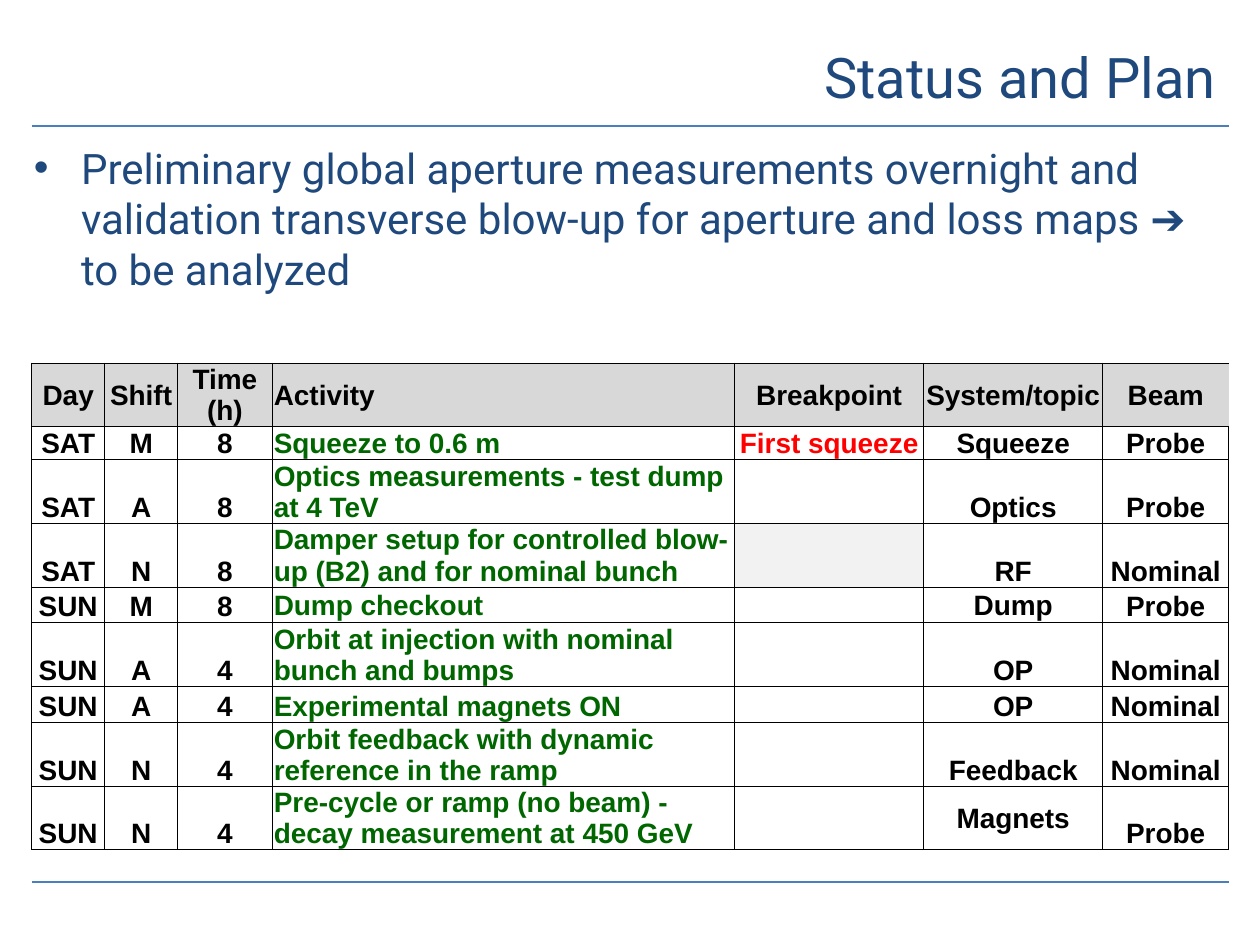
from lxml import etree
from pptx import Presentation, util as u
from pptx.dml.color import RGBColor
from pptx.enum import shapes, text
from pptx.oxml import ns

NAVY = RGBColor(0x1F, 0x49, 0x7D)
BLUE = RGBColor(0x4B, 0x7E, 0xBC)
BLACK = RGBColor(0, 0, 0)
WHITE = RGBColor(255, 255, 255)
GREEN = RGBColor(0, 0x66, 0)
RED = RGBColor(255, 0, 0)
GRAY = RGBColor(0xD8, 0xD8, 0xD8)
PALE = RGBColor(0xF2, 0xF2, 0xF2)

MID, LOW = text.MSO_ANCHOR.MIDDLE, text.MSO_ANCHOR.BOTTOM
LEFT, MIDST = text.PP_ALIGN.LEFT, text.PP_ALIGN.CENTER

WIDTHS = [1.47, 1.47, 1.91, 9.32, 3.81, 3.61, 2.54]
HEIGHTS = [0.53] + [0.61] * 7 + [0.56]
HEAD = ["Day", "Shift", "Time (h)", "Activity", "Breakpoint", "System/topic", "Beam"]
PLAN = [
    ["SAT", "M", "8", "Squeeze to 0.6 m", "First squeeze", "Squeeze", "Probe"],
    ["SAT", "A", "8", "Optics measurements - test dump at 4 TeV", "", "Optics", "Probe"],
    ["SAT", "N", "8", "Damper setup for controlled blow-up (B2) and for nominal bunch",
     "", "RF", "Nominal"],
    ["SUN", "M", "8", "Dump checkout", "", "Dump", "Probe"],
    ["SUN", "A", "4", "Orbit at injection with nominal bunch and bumps", "", "OP", "Nominal"],
    ["SUN", "A", "4", "Experimental magnets ON", "", "OP", "Nominal"],
    ["SUN", "N", "4", "Orbit feedback with dynamic reference in the ramp",
     "", "Feedback", "Nominal"],
    ["SUN", "N", "4", "Pre-cycle or ramp (no beam) - decay measurement at 450 GeV",
     "", "Magnets", "Probe"],
]
ACT, BREAK, TOPIC, BEAM = 3, 4, 5, 6
MIDDLE = {(row, ACT) for row in (1, 2, 3, 4, 5, 8)} | {(4, TOPIC), (8, TOPIC)}
INK = {ACT: GREEN, BREAK: RED}


class Deck:
    sans = "Roboto"
    grid = "Arial"

    def __init__(self, slide):
        self.slide = slide

    def run(self, para, words, face, size, color, bold=False):
        run = para.add_run()
        run.text = words
        font = run.font
        font.name, font.size, font.bold = face, u.Pt(size), bold
        font.color.rgb = color

    def place(self, shape, left, top, width, height):
        shape.left, shape.top = u.Cm(left), u.Cm(top)
        shape.width, shape.height = u.Cm(width), u.Cm(height)

    def rule(self, top):
        line = self.slide.shapes.add_connector(
            shapes.MSO_CONNECTOR.STRAIGHT, u.Cm(0.64), u.Cm(top), u.Cm(24.77), u.Cm(top))
        line.line.color.rgb = BLUE
        line.line.width = u.Pt(1.5)
        etree.SubElement(line._element.spPr, ns.qn("a:effectLst"))

    def title(self, words):
        shape = self.slide.shapes.title
        self.place(shape, 4.45, 0.43, 20.32, 2.21)
        frame = shape.text_frame
        frame.vertical_anchor = MID
        frame.auto_size = text.MSO_AUTO_SIZE.NONE
        para = frame.paragraphs[0]
        para.alignment = text.PP_ALIGN.RIGHT
        self.run(para, words, self.sans, 32, NAVY)

    def body(self, words):
        shape = self.slide.placeholders[1]
        self.place(shape, 0.43, 2.74, 24.13, 2.54)
        frame = shape.text_frame
        frame.auto_size = text.MSO_AUTO_SIZE.NONE
        para = frame.paragraphs[0]
        prop = para._p.get_or_add_pPr()
        prop.set("marL", str(u.Cm(0.95)))
        prop.set("indent", str(u.Cm(-0.95)))
        etree.SubElement(prop, ns.qn("a:buFont"), typeface="Arial")
        etree.SubElement(prop, ns.qn("a:buChar"), char="•")
        para.space_before = u.Pt(0)
        self.run(para, words, self.sans, 24, NAVY)

    def edge(self, cell, sides):
        prop = cell._tc.get_or_add_tcPr()
        for side in "LRTB":
            line = etree.SubElement(prop, ns.qn("a:ln" + side), w=str(u.Pt(0.5)))
            if side in sides:
                fill = etree.SubElement(line, ns.qn("a:solidFill"))
                etree.SubElement(fill, ns.qn("a:srgbClr"), val=str(BLACK))
            else:
                etree.SubElement(line, ns.qn("a:noFill"))

    def cell(self, cell, words, color, fill, align, anchor, sides="LRTB"):
        self.edge(cell, sides)
        cell.margin_left = cell.margin_right = cell.margin_top = u.Cm(0.03)
        cell.margin_bottom = 0
        cell.vertical_anchor = anchor
        if fill is None:
            cell.fill.background()
        else:
            cell.fill.solid()
            cell.fill.fore_color.rgb = fill
        para = cell.text_frame.paragraphs[0]
        para.alignment = align
        if words:
            self.run(para, words, self.grid, 16, color, True)
        else:
            etree.SubElement(para._p, ns.qn("a:endParaRPr"), sz="1600")

    def table(self, rows):
        frame = self.slide.shapes.add_table(
            len(rows), len(WIDTHS), u.Cm(0.64), u.Cm(7.32), u.Cm(24.13), u.Cm(10.31))
        table = frame.table
        table.first_row = table.horz_banding = False
        for col, width in zip(table.columns, WIDTHS):
            col.width = u.Cm(width)
        for row, height in zip(table.rows, HEIGHTS):
            row.height = u.Cm(height)
        frame.height = u.Cm(10.31)
        for r, row in enumerate(rows):
            for c, words in enumerate(row):
                align = LEFT if c == ACT else MIDST
                spot = table.cell(r, c)
                if r == 0:
                    sides = "LTB" if c == BEAM else "LRTB"
                    self.cell(spot, words, BLACK, GRAY, align, MID, sides)
                    continue
                fill = None if c < ACT else PALE if (r, c) == (3, BREAK) else WHITE
                anchor = MID if (r, c) in MIDDLE else LOW
                self.cell(spot, words, INK.get(c, BLACK), fill, align, anchor)


def main():
    show = Presentation()
    show.slide_width, show.slide_height = u.Cm(25.4), u.Cm(19.05)
    deck = Deck(show.slides.add_slide(show.slide_layouts[1]))
    for top in (2.54, 17.78):
        deck.rule(top)
    deck.title("Status and Plan")
    deck.body("Preliminary global aperture measurements overnight and validation "
              "transverse blow-up for aperture and loss maps ➔ to be analyzed")
    deck.table([HEAD] + PLAN)
    show.save("out.pptx")


if __name__ == "__main__":
    main()
